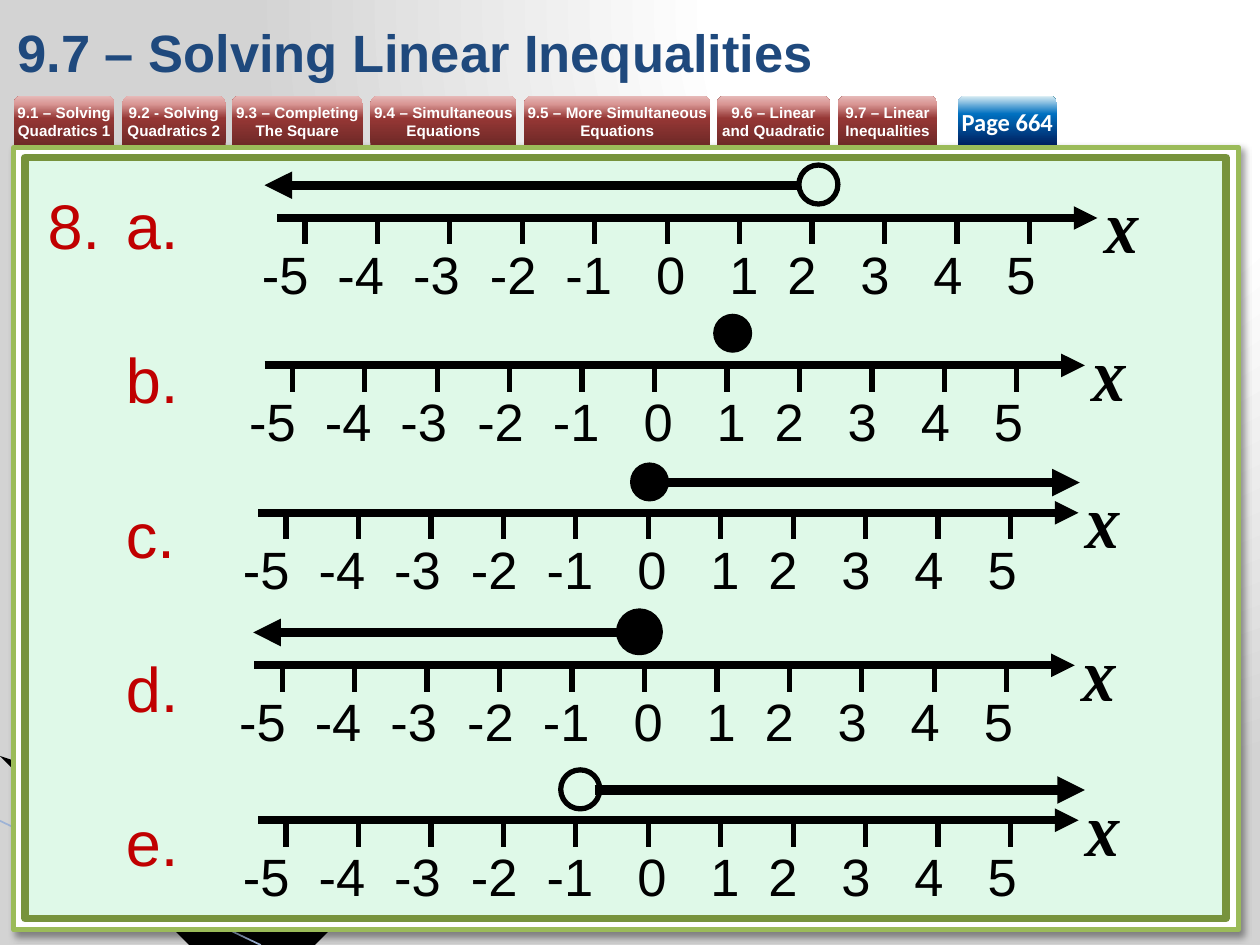
"""Build the linear inequalities slide with five number lines."""
import lxml.etree
import pptx
import pptx.dml.color
import pptx.enum.shapes
import pptx.enum.text
import pptx.oxml
import pptx.oxml.ns
import pptx.util

Inches = pptx.util.Inches
Pt = pptx.util.Pt
qn = pptx.oxml.ns.qn
colour = pptx.dml.color.RGBColor.from_string
SHAPE = pptx.enum.shapes.MSO_SHAPE
CENTER = pptx.enum.text.PP_ALIGN.CENTER
MIDDLE = pptx.enum.text.MSO_ANCHOR.MIDDLE
NAMESPACE = pptx.oxml.ns.nsdecls("a")


def draw_line(shapes, start, end, width, hue="000000", arrow=False):
    """Draw a straight line, with an arrowhead at its end if asked."""
    line = shapes.add_connector(
        pptx.enum.shapes.MSO_CONNECTOR.STRAIGHT,
        *(Inches(value) for value in start + end))
    line.line.color.rgb = colour(hue)
    line.line.width = Pt(width)
    if arrow:
        lxml.etree.SubElement(line.line._get_or_add_ln(), qn("a:tailEnd"), type="triangle")
    lxml.etree.SubElement(line._element.spPr, qn("a:effectLst"))


def write(box, text, size, font, hue, bold=False, italic=False):
    """Fill a box with text in one style."""
    box.text_frame.word_wrap = True
    box.text_frame.text = text
    for para in box.text_frame.paragraphs:
        for span in para.runs:
            span.font.size = Pt(size)
            span.font.name = font
            span.font.bold = bold
            span.font.italic = italic
            span.font.color.rgb = colour(hue)


deck = pptx.Presentation()
deck.slide_width = Inches(10)
deck.slide_height = Inches(7.5)
page = deck.slides.add_slide(deck.slide_layouts[6])

page.background.fill.solid()
gradients = [(
    page._element.find(".//" + qn("p:bgPr")),
    [(0, "FFFFFF"), (40, "FFFFFF"), (100, "D3D3D3")],
    '<a:path path="circle"><a:fillToRect l="65000" t="0" r="0" b="98000"/></a:path>',
)]

wedges = [
    ("A7B9DB", [(-0.01, 6.5), (3.49, 7.5), (2.59, 7.5), (-0.01, 6.49)]),
    ("000000", [(0, 6.48), (2.56, 7.49), (2.02, 7.5), (0.01, 6.49)]),
]
for hue, points in wedges:
    outline = page.shapes.build_freeform(*points[0], scale=Inches(1))
    outline.add_line_segments(points[1:], close=True)
    wedge = outline.convert_to_shape()
    wedge.shadow.inherit = False
    wedge.fill.solid()
    wedge.fill.fore_color.rgb = colour(hue)
    wedge.line.fill.background()
    if hue == "A7B9DB":
        tint = wedge._element.spPr.find(".//" + qn("a:srgbClr"))
        lxml.etree.SubElement(tint, qn("a:alpha"), val="40000")
draw_line(page.shapes, (-0.01, 6.51), (2.07, 7.5), 0.95, "9EB3D6")

panels = [
    (0.11, 1.17, 9.72, 6.21, "FFFFFF", "9BBB59", 3),
    (0.2, 1.25, 9.53, 6.04, "DFF9E8", "77933C", 4.33),
]
for *frame, fill, border, width in panels:
    panel = page.shapes.add_shape(SHAPE.RECTANGLE, *(Inches(value) for value in frame))
    panel.shadow.inherit = False
    panel.fill.solid()
    panel.fill.fore_color.rgb = colour(fill)
    panel.line.color.rgb = colour(border)
    panel.line.width = Pt(width)
    if fill == "FFFFFF":
        panel._element.spPr.find(qn("a:effectLst")).append(pptx.oxml.parse_xml(
            f'<a:outerShdw {NAMESPACE} blurRad="50800" dist="38100" dir="2700000" algn="tl">'
            '<a:srgbClr val="000000"><a:alpha val="40000"/></a:srgbClr></a:outerShdw>'))

red = [(0, "6F2927"), (54, "953735"), (83, "D99694"), (100, "E6B9B8")]
blue = [(0, "002060"), (63, "0070C0"), (100, "DBEEF4")]
tabs = [
    (0.11, 0.8, "9.1 – Solving Quadratics 1"),
    (0.97, 0.82, "9.2 - Solving Quadratics 2"),
    (1.84, 1.04, "9.3 – Completing The Square"),
    (2.94, 1.16, "9.4 – Simultaneous Equations"),
    (4.16, 1.48, "9.5 – More Simultaneous Equations"),
    (5.69, 0.9, "9.6 – Linear and Quadratic"),
    (6.65, 0.79, "9.7 – Linear Inequalities"),
    (7.6, 0.79, "Page 664"),
]
for left, width, label in tabs:
    tab = page.shapes.add_shape(
        SHAPE.ROUND_2_SAME_RECTANGLE, Inches(left), Inches(0.76), Inches(width), Inches(0.39))
    tab.shadow.inherit = False
    tab.fill.solid()
    tab.line.fill.background()
    is_page = label.startswith("Page")
    gradients.append((
        tab._element.spPr, blue if is_page else red, '<a:lin ang="16200000" scaled="0"/>'))
    write(tab, label, 14 if is_page else 8.7, "Calibri" if is_page else "Arial", "FFFFFF", True)
    frame = tab.text_frame
    frame.margin_left = frame.margin_right = frame.margin_top = frame.margin_bottom = 0
    frame.vertical_anchor = MIDDLE
    frame.paragraphs[0].alignment = CENTER
    if not is_page:
        frame.paragraphs[0].line_spacing = Pt(10)

for parent, stops, direction in gradients:
    marks = "".join(
        f'<a:gs pos="{place * 1000}"><a:srgbClr val="{hue}"/></a:gs>' for place, hue in stops)
    parent.replace(parent.find(qn("a:solidFill")), pptx.oxml.parse_xml(
        f'<a:gradFill {NAMESPACE} rotWithShape="1"><a:gsLst>{marks}</a:gsLst>{direction}</a:gradFill>'))

title = page.shapes.add_textbox(Inches(0.04), Inches(0.05), Inches(8.43), Inches(0.71))
write(title, "9.7 – Solving Linear Inequalities", 30, "Arial", "1F497D", True)
title.text_frame.vertical_anchor = MIDDLE

parts = page.shapes.add_textbox(Inches(0.28), Inches(1.37), Inches(9.37), Inches(5.55))
write(parts, "a.\nb.\nc.\nd.\ne.", 36, "Arial", "C00000")
parts.text_frame.margin_top = Inches(0.11)
for index, para in enumerate(parts.text_frame.paragraphs):
    properties = para._p.get_or_add_pPr()
    properties.set("marL", str(Inches(0.62)))
    if index == 0:
        properties.set("indent", str(Inches(-0.62)))
        lxml.etree.SubElement(properties, qn("a:buAutoNum"), type="arabicPeriod", startAt="8")
    else:
        properties.set("indent", "0")
        para.space_before = Pt(45)

number_stops = [0.6, 1.2, 1.81, 2.41, 3.13, 3.71, 4.17, 4.75, 5.33, 5.91]
number_lines = [
    (2.2, 1.73, 6.34, 1.31, 3, False, (6.34, 2.1)),
    (2.1, 2.9, 5.66, 2.49, 0, True, None),
    (2.05, 4.07, 5, 3.67, 0, True, (5.3, 8.57)),
    (2.02, 5.28, 4.92, 4.86, 4.5, True, (4.92, 2.01)),
    (2.05, 6.51, 4.45, 6.11, 3, False, (4.72, 8.61)),
]
for left, top, dot_left, dot_top, outline_width, closed, ray in number_lines:
    axis = page.shapes.add_group_shape().shapes
    draw_line(axis, (left, top), (left + 6.51, top), 4.5, arrow=True)
    for index in range(11):
        tick = left + 0.22 + index * 0.575
        draw_line(axis, (tick, top), (tick, top + 0.21), 3)

    numbers = axis.add_textbox(Inches(left - 0.22), Inches(top + 0.14), Inches(6.4), Inches(0.61))
    write(numbers, "\t".join(str(value) for value in range(-5, 6)), 30, "Arial", "000000")
    stop_list = lxml.etree.SubElement(
        numbers.text_frame.paragraphs[0]._p.get_or_add_pPr(), qn("a:tabLst"))
    for stop in number_stops:
        lxml.etree.SubElement(stop_list, qn("a:tab"), pos=str(Inches(stop)), algn="l")

    name = axis.add_textbox(Inches(left + 6.47), Inches(top - 0.18), Inches(0.45), Inches(0.61))
    write(name, "X", 30, "Cambria", "000000", True, True)
    name.text_frame.word_wrap = False

    dot = page.shapes.add_shape(
        SHAPE.OVAL, Inches(dot_left), Inches(dot_top), Inches(0.31), Inches(0.31))
    dot.shadow.inherit = False
    if closed:
        dot.fill.solid()
        dot.fill.fore_color.rgb = colour("000000")
    else:
        dot.fill.background()
    if outline_width:
        dot.line.color.rgb = colour("000000")
        dot.line.width = Pt(outline_width)
    else:
        dot.line.fill.background()
    if ray:
        height = dot_top + 0.16
        draw_line(page.shapes, (ray[0], height), (ray[1], height), 5.25, arrow=True)

deck.save("out.pptx")
